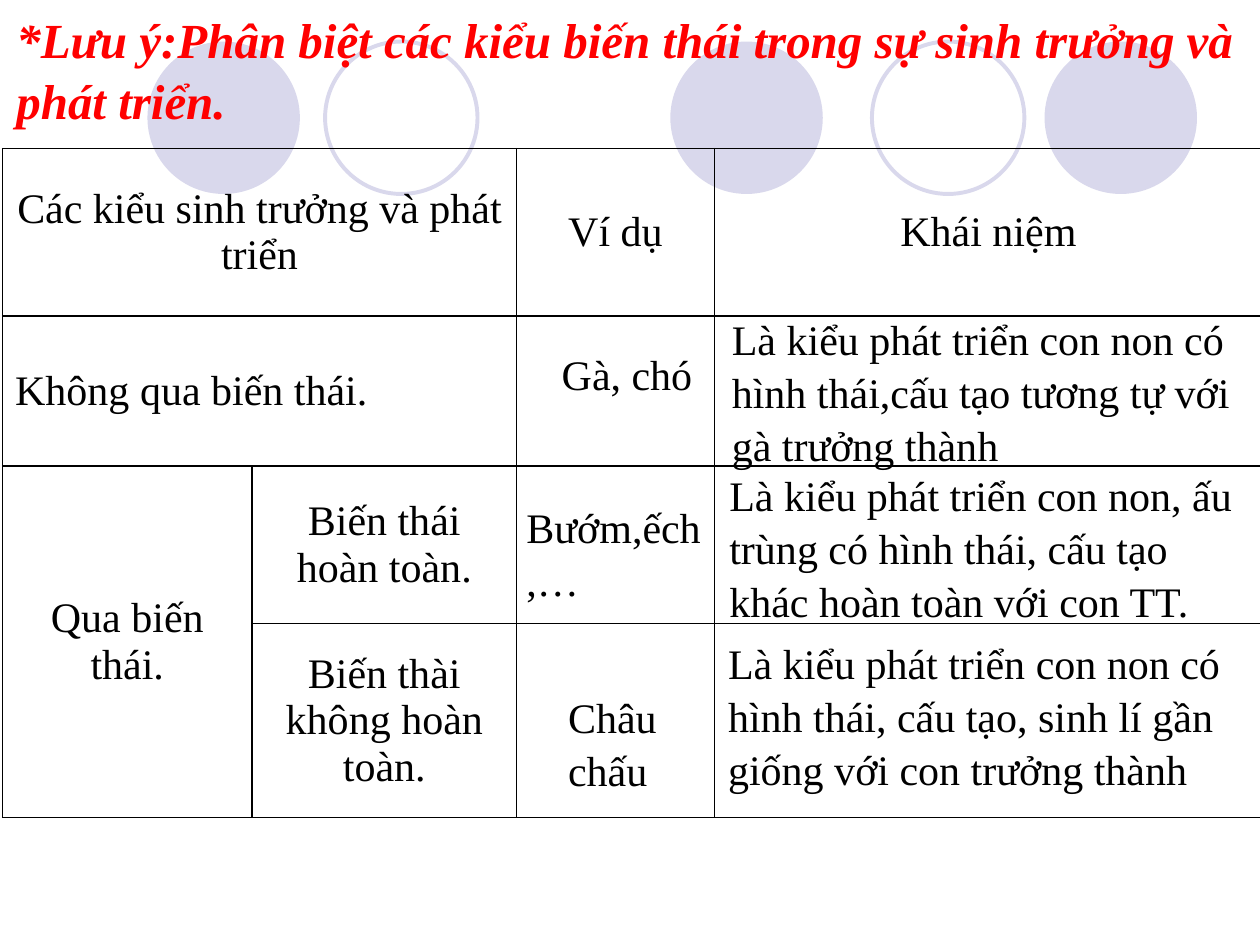
import pptx
import pptx.util
import pptx.dml.color
import pptx.enum.shapes
import pptx.enum.text
import pptx.oxml
import pptx.oxml.ns
from itertools import accumulate

Inches, Pt = pptx.util.Inches, pptx.util.Pt
MIDDLE = pptx.enum.text.MSO_ANCHOR.MIDDLE
TOP = pptx.enum.text.MSO_ANCHOR.TOP
LEFT, CENTER = pptx.enum.text.PP_ALIGN.LEFT, pptx.enum.text.PP_ALIGN.CENTER

W, H = 10, 7.5
FONT = "Times New Roman"
COLORS = {"circle": "D9D8EC", "title": "FF0000", "text": "000000", "border": "000000"}
COLS = [1.98, 2.1, 1.57, 4.35]
ROWS = [1.33, 1.19, 1.25, 1.54]
TITLE = "*Lưu ý:Phân biệt các kiểu biến thái trong sự sinh trưởng và phát triển."

# Left edge of each circle, and whether it is filled
CIRCLES = [(5.32, True), (8.29, True), (1.17, True), (6.92, False), (2.58, False)]

# row, column, last row, last column, text, alignment
CELLS = [
    (0, 0, 0, 1, "Các kiểu sinh trưởng và phát triển", CENTER),
    (0, 2, 0, 2, "Ví dụ", CENTER),
    (0, 3, 0, 3, "Khái niệm", CENTER),
    (1, 0, 1, 1, "Không qua biến thái.", LEFT),
    (2, 0, 3, 0, "Qua biến thái.", CENTER),
    (2, 1, 2, 1, "Biến thái hoàn toàn.", CENTER),
    (3, 1, 3, 1, "Biến thài không hoàn toàn.", CENTER),
]

# row, column, offset from the cell's corner, size, text
ANSWERS = [
    (1, 2, 0.26, 0.19, 1.33, 0.51, "Gà, chó"),
    (1, 3, 0.04, -0.09, 4.29, 1.31,
     "Là kiểu phát triển con non có hình thái,cấu tạo tương tự với gà trưởng thành"),
    (2, 3, 0.02, -0.04, 4.29, 1.31,
     "Là kiểu phát triển con non, ấu trùng có hình thái, cấu tạo khác hoàn toàn với con TT."),
    (3, 2, 0.31, 0.47, 1.28, 0.91, "Châu chấu"),
    (3, 3, 0.01, 0.04, 4.29, 1.31,
     "Là kiểu phát triển con non có hình thái, cấu tạo, sinh lí gần giống với con trưởng thành"),
    (2, 2, -0.02, 0.21, 1.61, 0.91, "Bướm,ếch,…"),
]


def rgb(name):
    return pptx.dml.color.RGBColor.from_string(COLORS[name])


def write(tf, text, size=24, color="text", align=LEFT, spacing=None, strong=False):
    tf.text = text
    p = tf.paragraphs[0]
    p.alignment = align
    p.line_spacing = spacing
    font = p.runs[0].font
    font.name, font.size = FONT, Pt(size)
    font.bold = font.italic = strong
    font.color.rgb = rgb(color)


def add_circles(slide, top, size):
    for left, filled in CIRCLES:
        sp = slide.shapes.add_shape(pptx.enum.shapes.MSO_SHAPE.OVAL, Inches(left),
                                    Inches(top), Inches(size), Inches(size))
        sp.shadow.inherit = False
        if filled:
            sp.fill.solid()
            sp.fill.fore_color.rgb = rgb("circle")
            sp.line.fill.background()
        else:
            sp.fill.background()
            sp.line.color.rgb = rgb("circle")
            sp.line.width = Pt(2.25)


def add_title(slide, left, top, width, height):
    title = slide.shapes.title
    title.left, title.top = Inches(left), Inches(top)
    title.width, title.height = Inches(width), Inches(height)
    tf = title.text_frame
    tf.word_wrap = True
    tf.auto_size = pptx.enum.text.MSO_AUTO_SIZE.NONE
    tf.vertical_anchor = TOP
    write(tf, TITLE, 28, "title", spacing=1.05, strong=True)
    # Bring the title in front of the circles
    slide.shapes._spTree.append(title._element)


def set_borders(cell):
    tc_pr = cell._tc.get_or_add_tcPr()
    for i, side in enumerate(("lnL", "lnR", "lnT", "lnB")):
        tc_pr.insert(i, pptx.oxml.parse_xml(
            f'<a:{side} {pptx.oxml.ns.nsdecls("a")} w="{Pt(1)}"><a:solidFill>'
            f'<a:srgbClr val="{COLORS["border"]}"/></a:solidFill></a:{side}>'))


def add_grid(slide, left, top):
    table = slide.shapes.add_table(len(ROWS), len(COLS), Inches(left), Inches(top),
                                   Inches(sum(COLS)), Inches(sum(ROWS))).table
    table.first_row = table.horz_banding = False
    for column, width in zip(table.columns, COLS):
        column.width = Inches(width)
    for row, height in zip(table.rows, ROWS):
        row.height = Inches(height)
    for cell in table.iter_cells():
        cell.fill.background()
        set_borders(cell)
    for r0, c0, r1, c1, text, align in CELLS:
        cell = table.cell(r0, c0)
        if (r0, c0) != (r1, c1):
            cell.merge(table.cell(r1, c1))
        cell.vertical_anchor = MIDDLE
        write(cell.text_frame, text, align=align)


def add_answers(slide, left, top):
    xs = list(accumulate(COLS, initial=left))
    ys = list(accumulate(ROWS, initial=top))
    for row, col, dx, dy, width, height, text in ANSWERS:
        box = slide.shapes.add_textbox(Inches(xs[col] + dx), Inches(ys[row] + dy),
                                       Inches(width), Inches(height))
        box.text_frame.word_wrap = True
        write(box.text_frame, text, spacing=1.05)


def main():
    prs = pptx.Presentation()
    prs.slide_width, prs.slide_height = Inches(W), Inches(H)
    slide = prs.slides.add_slide(prs.slide_layouts[5])
    add_circles(slide, 0.33, 1.21)
    add_title(slide, 0.03, 0, W, 1.52)
    add_grid(slide, 0.02, 1.18)
    add_answers(slide, 0.02, 1.18)
    prs.save("out.pptx")


if __name__ == "__main__":
    main()
